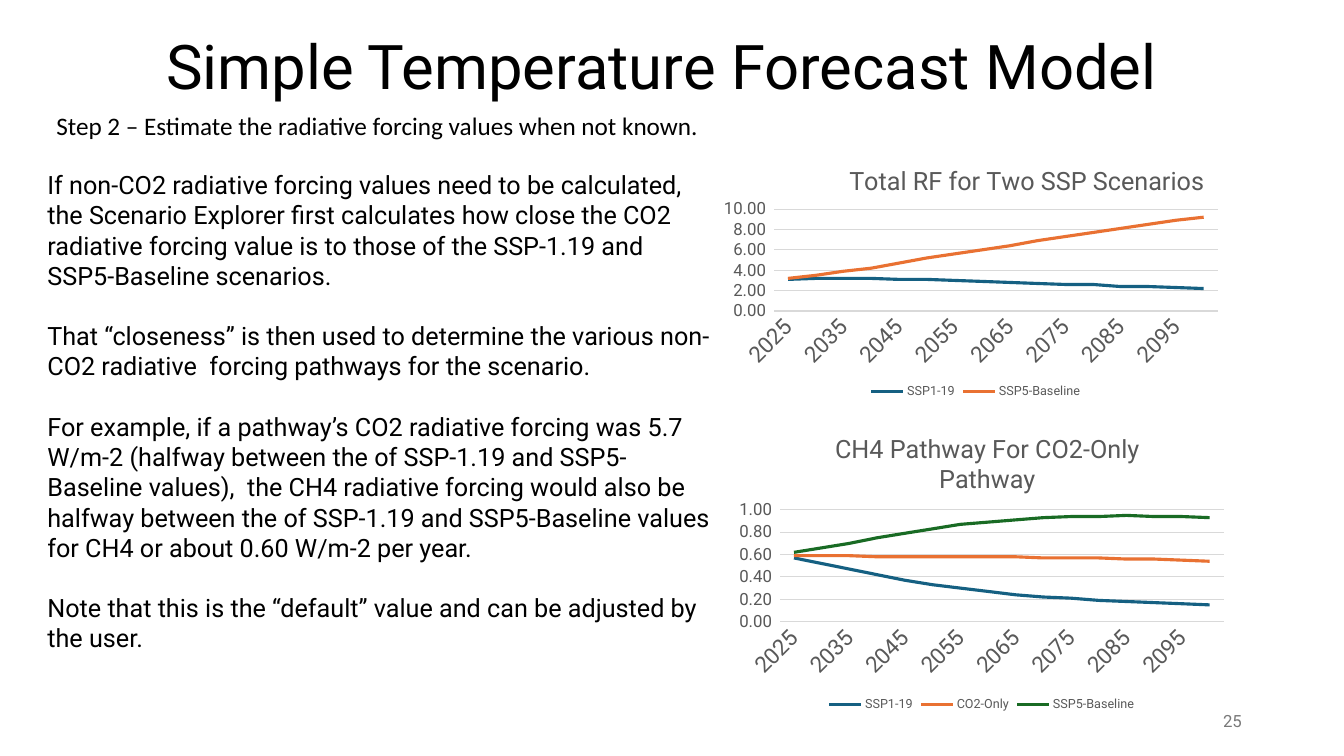
from dataclasses import dataclass

from lxml import etree
from pptx import Presentation
from pptx import util as u
from pptx.chart import data as cd
from pptx.dml.color import RGBColor
from pptx.enum import chart as ce
from pptx.enum import text as te
from pptx.oxml import ns


@dataclass(frozen=True)
class Theme:
    """Holds the colours, fonts and type sizes of the slide."""
    ink: str = "000000"
    muted: str = "595959"
    number: str = "797979"
    grid: str = "D9D9D9"
    blue: str = "156082"
    orange: str = "E97132"
    green: str = "196B24"
    main: str = "Roboto"
    accent: str = "Calibri"
    title_size: int = 44
    body_size: int = 18
    category_size: int = 16
    small_size: int = 12
    legend_size: int = 9


THEME = Theme()
YEARS = [str(year) for year in range(2025, 2101, 5)]
NUMBER_FORMAT = r"#,##0.00_);\(#,##0.00\)"
BODY = [
    "If non-CO2 radiative forcing values need to be calculated, the Scenario Explorer first calculates "
    "how close the CO2 radiative forcing value is to those of the SSP-1.19 and SSP5-Baseline scenarios.",
    "That “closeness” is then used to determine the various non-CO2 radiative  forcing pathways for the scenario.",
    "For example, if a pathway’s CO2 radiative forcing was 5.7 W/m-2 (halfway between the of SSP-1.19 and "
    "SSP5-Baseline values),  the CH4 radiative forcing would also be halfway between the of SSP-1.19 and "
    "SSP5-Baseline values for CH4 or about 0.60 W/m-2 per year.",
    "Note that this is the “default” value and can be adjusted by the user.",
]
TOTAL_FORCING = {
    "title": "Total RF for Two SSP Scenarios", "top": 10, "step": 2,
    "title_at": {"x": 0.24, "y": 0.02},
    "plot_at": {"x": 0.1, "y": 0.22, "w": 0.88, "h": 0.41},
    "series": [
        ("SSP1-19", THEME.blue,
         [3.1, 3.2, 3.2, 3.2, 3.1, 3.1, 3, 2.9, 2.8, 2.7, 2.6, 2.6, 2.4, 2.4, 2.3, 2.2]),
        ("SSP5-Baseline", THEME.orange,
         [3.2, 3.5, 3.9, 4.2, 4.7, 5.2, 5.6, 6, 6.4, 6.9, 7.3, 7.7, 8.1, 8.5, 8.9, 9.2]),
    ],
}
METHANE = {
    "title": "CH4 Pathway For CO2-Only Pathway", "top": 1, "step": 0.2,
    "title_at": {"x": 0.2, "y": 0.05},
    "plot_at": {"x": 0.1, "y": 0.32, "w": 0.88, "h": 0.37},
    "series": [
        ("SSP1-19", THEME.blue,
         [0.57, 0.52, 0.47, 0.42, 0.37, 0.33, 0.3, 0.27, 0.24, 0.22, 0.21, 0.19, 0.18, 0.17, 0.16, 0.15]),
        ("CO2-Only", THEME.orange,
         [0.59, 0.59, 0.59, 0.58, 0.58, 0.58, 0.58, 0.58, 0.58, 0.57, 0.57, 0.57, 0.56, 0.56, 0.55, 0.54]),
        ("SSP5-Baseline", THEME.green,
         [0.62, 0.66, 0.7, 0.75, 0.79, 0.83, 0.87, 0.89, 0.91, 0.93, 0.94, 0.94, 0.95, 0.94, 0.94, 0.93]),
    ],
}


def apply(target, values):
    """Sets every named attribute of the target."""
    for name, value in values.items():
        setattr(target, name, value)


def set_font(font, size, colour, name=THEME.main):
    """Gives a font its size, colour and typeface."""
    apply(font, {"size": u.Pt(size), "name": name, "bold": False})
    font.color.rgb = RGBColor.from_string(colour)


def move(shape, box):
    """Places a shape in a box of left, top, width and height."""
    apply(shape, dict(zip(("left", "top", "width", "height"), (u.Cm(side) for side in box))))


def write(shape, box, lines, size, colour, name=THEME.main, anchor=te.MSO_ANCHOR.TOP, **layout):
    """Fills a text shape with paragraphs of one format."""
    move(shape, box)
    frame = shape.text_frame
    apply(frame, {"word_wrap": True, "auto_size": te.MSO_AUTO_SIZE.NONE, "vertical_anchor": anchor})
    for index, line in enumerate(lines):
        para = frame.add_paragraph() if index else frame.paragraphs[0]
        apply(para, {"space_before": u.Pt(0), **layout})
        span = para.add_run()
        span.text = line
        set_font(span.font, size, colour, name)


def add_heading(page, box):
    """Writes the title and the step line below it."""
    left, top, width, height = box
    write(page.shapes.title, box, ["Simple Temperature Forecast Model"], THEME.title_size, THEME.ink,
          anchor=te.MSO_ANCHOR.MIDDLE, alignment=te.PP_ALIGN.CENTER, line_spacing=0.9)
    step = page.shapes.add_textbox(0, 0, 0, 0)
    write(step, (left - 0.91, top + 2.64, width + 2.72, 1.09),
          ["Step 2 – Estimate the radiative forcing values when not known."],
          THEME.body_size, THEME.ink, THEME.accent, line_spacing=1.15)


def add_body(page, box):
    """Writes the explanation without bullets."""
    body = page.placeholders[1]
    write(body, box, BODY, THEME.body_size, THEME.ink,
          alignment=te.PP_ALIGN.LEFT, space_after=u.Cm(0.76))
    for para in body.text_frame.paragraphs:
        props = para._p.get_or_add_pPr()
        props.set("marL", "0")
        props.set("indent", "0")
        etree.SubElement(props, ns.qn("a:buNone"))


def set_layout(element, index, fractions, inner=False):
    """Fixes a chart part at fractions of the chart area."""
    for old in element.findall(ns.qn("c:layout")):
        element.remove(old)
    layout = etree.Element(ns.qn("c:layout"))
    manual = etree.SubElement(layout, ns.qn("c:manualLayout"))
    values = {"layoutTarget": "inner"} if inner else {}
    values.update(xMode="edge", yMode="edge", **fractions)
    for name, value in values.items():
        etree.SubElement(manual, ns.qn(f"c:{name}")).set("val", str(value))
    element.insert(index, layout)


def style_axes(chart, top, step):
    """Formats the year axis and the value axis."""
    years, values = chart.category_axis, chart.value_axis
    for axis, size in ((years, THEME.category_size), (values, THEME.small_size)):
        apply(axis, {"major_tick_mark": ce.XL_TICK_MARK.NONE, "minor_tick_mark": ce.XL_TICK_MARK.NONE})
        set_font(axis.tick_labels.font, size, THEME.muted)
    apply(values, {"minimum_scale": 0, "maximum_scale": top, "major_unit": step,
                   "has_major_gridlines": True})
    apply(values.tick_labels, {"number_format": NUMBER_FORMAT, "number_format_is_linked": False})
    values.format.line.fill.background()
    for line in (years.format.line, values.major_gridlines.format.line):
        line.width = u.Pt(0.75)
        line.color.rgb = RGBColor.from_string(THEME.grid)
    element = years._element
    element.find(ns.qn("c:txPr")).find(ns.qn("a:bodyPr")).set("rot", "-2700000")
    skip = etree.Element(ns.qn("c:tickLblSkip"))
    skip.set("val", "2")
    element.find(ns.qn("c:noMultiLvlLbl")).addprevious(skip)


def add_line_chart(page, box, content):
    """Draws one titled line chart with its legend."""
    data = cd.CategoryChartData(number_format="0.00")
    data.categories = YEARS
    for name, _, values in content["series"]:
        data.add_series(name, values)
    frame = page.shapes.add_chart(ce.XL_CHART_TYPE.LINE, *(u.Cm(side) for side in box), data)
    chart = frame.chart
    set_font(chart.font, 10, THEME.ink)
    apply(chart, {"has_title": True, "has_legend": True})
    title = chart.chart_title
    title.text_frame.text = content["title"]
    set_font(title.text_frame.paragraphs[0].runs[0].font, THEME.body_size, THEME.muted)
    set_layout(title._element, 1, content["title_at"])
    set_layout(chart._chartSpace.chart.plotArea, 0, content["plot_at"], inner=True)
    apply(chart.legend, {"position": ce.XL_LEGEND_POSITION.BOTTOM, "include_in_layout": False})
    set_font(chart.legend.font, THEME.legend_size, THEME.muted)
    chart.plots[0].vary_by_categories = False
    for series, (_, colour, _) in zip(chart.plots[0].series, content["series"]):
        series.smooth = False
        series.format.line.width = u.Pt(2.25)
        series.format.line.color.rgb = RGBColor.from_string(colour)
    style_axes(chart, content["top"], content["step"])


def add_page_number(page, box):
    """Writes the page number at the lower right."""
    write(page.shapes.add_textbox(0, 0, 0, 0), box, ["25"], THEME.small_size, THEME.number,
          anchor=te.MSO_ANCHOR.MIDDLE, alignment=te.PP_ALIGN.RIGHT)


def main():
    """Builds and saves the deck."""
    deck = Presentation()
    apply(deck, {"slide_width": u.Cm(33.87), "slide_height": u.Cm(19.05)})
    page = deck.slides.add_slide(deck.slide_layouts[1])
    add_heading(page, (2.08, -0.1, 29.21, 3.68))
    add_body(page, (0.94, 4.14, 17.3, 12.57))
    add_line_chart(page, (18.24, 3.89, 12.7, 6.27), TOTAL_FORCING)
    add_line_chart(page, (18.39, 10.41, 12.7, 7.62), METHANE)
    add_page_number(page, (23.93, 17.65, 7.62, 1.02))
    deck.save("out.pptx")


if __name__ == "__main__":
    main()
